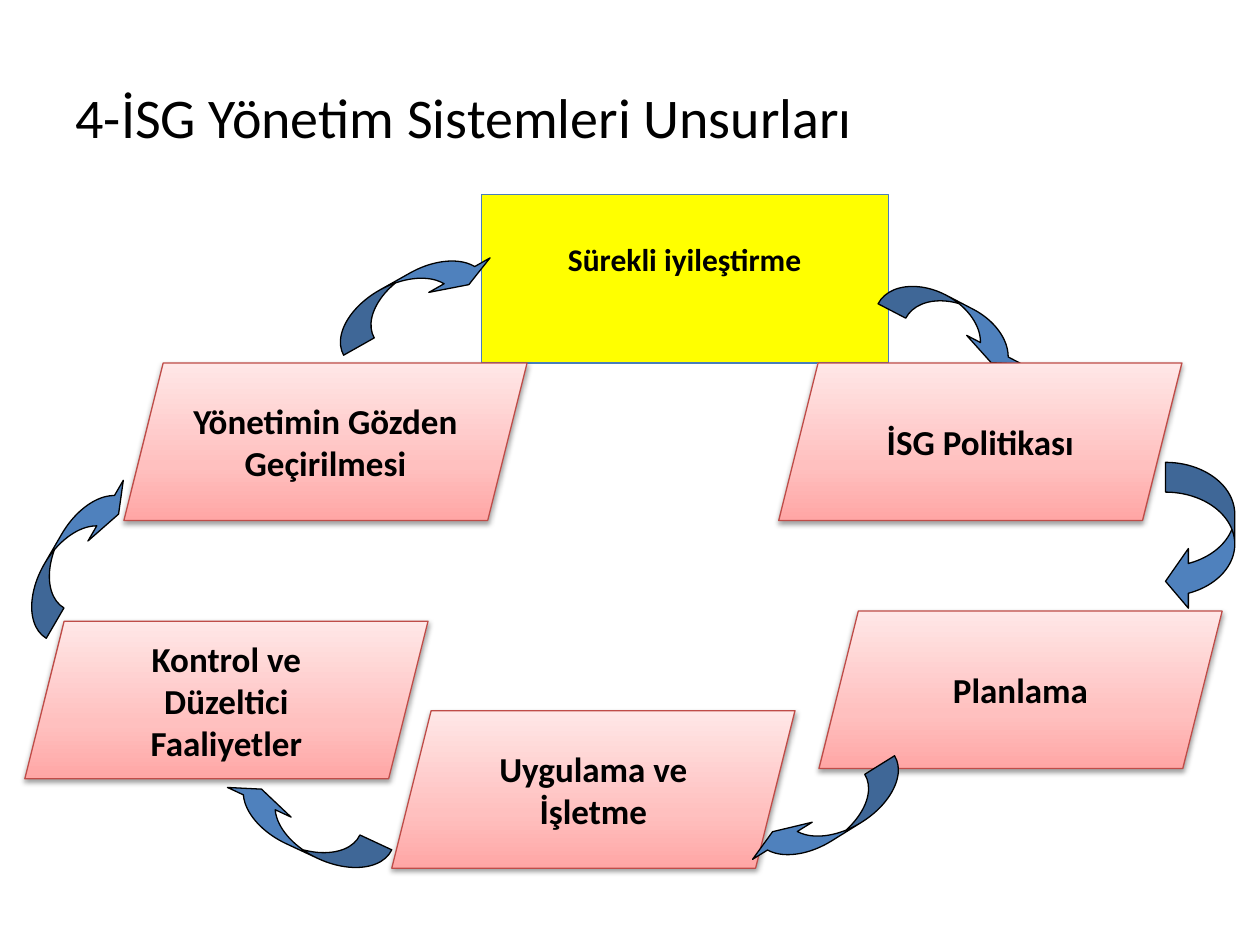
from copy import deepcopy
from lxml.etree import SubElement
from pptx import Presentation
from pptx.dml.color import RGBColor
from pptx.enum.shapes import MSO_SHAPE as Shape
from pptx.enum.text import MSO_ANCHOR as Anchor, PP_ALIGN as Align
from pptx.oxml.ns import qn
from pptx.util import Pt

STEP_SIZE = (230.4, 90)
STEP_GRADIENT = ((0, "FFA6A5"), (0.35, "FFC0BF"), (1, "FFE7E7"))
STEPS = (
    ("Planlama", 468, 349.2),
    ("Uygulama ve İşletme", 223.9, 406.1),
    ("Kontrol ve Düzeltici Faaliyetler", 14.2, 355),
    ("Yönetimin Gözden Geçirilmesi", 70.8, 207.4),
)
POLICY = ("İSG Politikası", 445, 207.4)
SHORT_ARC, LONG_ARC = (0.8, 1.6, 0.33), (0.9, 1.8, 0.33)
DOWN, LEFT = Shape.CURVED_DOWN_ARROW, Shape.CURVED_LEFT_ARROW
# kind, box (left, top, width, height), rotation, adjustments
ARROWS = (
    (DOWN, (501.8, 173.5, 90.7, 22.3), 27.5, SHORT_ARC),
    (DOWN, (422.6, 457.2, 102.2, 22.3), 148.1, LONG_ARC),
    (LEFT, (666, 264.2, 39.6, 85), 0, (0.43, 0.86, 0.33)),
    (DOWN, (121.7, 463, 102.2, 22.3), 205, LONG_ARC),
    (DOWN, (-8.6, 303.8, 102.2, 22.3), 300.2, LONG_ARC),
    (DOWN, (184.3, 157, 102.2, 22.3), 330.6, LONG_ARC),
)


def color(value):
    return RGBColor.from_string(value)


def place(shape, box):
    for name, value in zip(("left", "top", "width", "height"), box):
        setattr(shape, name, Pt(value))


def outline(shape, value):
    shape.line.color.rgb = color(value)
    shape.line.width = Pt(0.75)


def write(shape, text, size, align=Align.CENTER, anchor=Anchor.MIDDLE, bold=True):
    frame = shape.text_frame
    frame.word_wrap = True
    frame.vertical_anchor = anchor
    para = frame.paragraphs[0]
    para.text = text
    para.alignment = align
    para.space_before = Pt(0)
    style = {"name": "Calibri", "size": Pt(size), "bold": bold}
    for name, value in style.items():
        setattr(para.runs[0].font, name, value)
    para.runs[0].font.color.rgb = color("000000")
    return para


def add_title(page, box):
    place(page.shapes.title, box)
    write(page.shapes.title, "4-İSG Yönetim Sistemleri Unsurları", 32,
          align=Align.LEFT, bold=False)


def add_goal(page, box):
    goal = page.placeholders[1]
    place(goal, box)
    goal.fill.solid()
    goal.fill.fore_color.rgb = color("FFFF00")
    outline(goal, "4A7EBB")
    para = write(goal, "Sürekli iyileştirme", 18, anchor=Anchor.TOP)
    goal.text_frame.margin_top = Pt(26)
    props = para._p.get_or_add_pPr()
    props.set("marL", "0")
    props.set("indent", "0")
    SubElement(props, qn("a:buNone"))


def fill_gradient(shape, stops):
    """Fill from bottom to top with (position, colour) stops."""
    shape.fill.gradient()
    shape.fill.gradient_angle = 90
    stop_list = next(shape._element.iter(qn("a:gsLst")))
    while len(stop_list) < len(stops):
        stop_list.append(deepcopy(stop_list[0]))
    for stop, (position, value) in zip(shape.fill.gradient_stops, stops):
        stop.position = position
        stop.color.rgb = color(value)


def add_soft_shadow(shape):
    shape.shadow.inherit = False
    effects = next(shape._element.iter(qn("a:effectLst")))
    shadow = SubElement(effects, qn("a:outerShdw"), blurRad=str(Pt(3.1)),
                        dist=str(Pt(1.6)), dir="5400000", rotWithShape="0")
    black = SubElement(shadow, qn("a:srgbClr"), val="000000")
    SubElement(black, qn("a:alpha"), val="38000")


def add_step(page, text, left, top):
    step = page.shapes.add_shape(Shape.PARALLELOGRAM, 0, 0, 0, 0)
    place(step, (left, top, *STEP_SIZE))
    fill_gradient(step, STEP_GRADIENT)
    outline(step, "BF4C48")
    add_soft_shadow(step)
    write(step, text, 20)


def add_arrow(page, kind, box, rotation, adjustments):
    arrow = page.shapes.add_shape(kind, 0, 0, 0, 0)
    place(arrow, box)
    arrow.rotation = rotation
    for index, value in enumerate(adjustments):
        arrow.adjustments[index] = value
    arrow.fill.solid()
    arrow.fill.fore_color.rgb = color("4F81BD")
    outline(arrow, "000000")
    arrow.shadow.inherit = False


def main():
    deck = Presentation()
    deck.slide_width, deck.slide_height = Pt(720), Pt(540)
    page = deck.slides.add_slide(deck.slide_layouts[1])
    add_title(page, (36, 21.6, 648, 90))
    add_goal(page, (275, 111.3, 232.6, 96.2))
    for step in STEPS:
        add_step(page, *step)
    for arrow in ARROWS:
        add_arrow(page, *arrow)
    add_step(page, *POLICY)
    deck.save("out.pptx")


if __name__ == "__main__":
    main()
